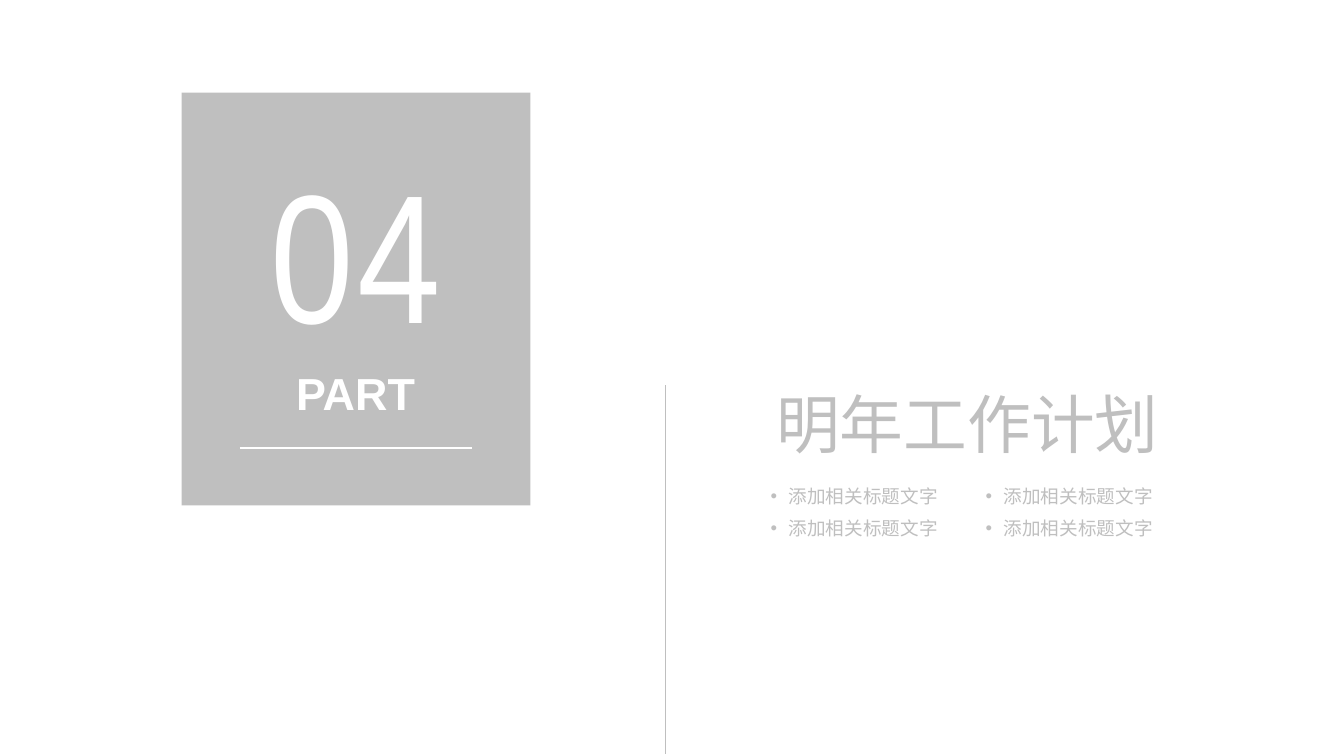
from itertools import product

from lxml.etree import SubElement
from pptx import Presentation
from pptx.dml.color import RGBColor
from pptx.enum.shapes import MSO_CONNECTOR, MSO_SHAPE
from pptx.enum.text import MSO_ANCHOR, MSO_AUTO_SIZE, PP_ALIGN
from pptx.oxml.ns import qn
from pptx.util import Inches, Pt

GREY = RGBColor(0xBF, 0xBF, 0xBF)
WHITE = RGBColor(0xFF, 0xFF, 0xFF)


class SectionPage:
    """One slide whose lengths are given in percent of its width and height."""

    font_name = "Arial"

    def __init__(self, deck):
        self.deck = deck
        self.page = deck.slides.add_slide(deck.slide_layouts.get_by_name("Title Only"))

    def place(self, left, top, width, height):
        across, down = self.deck.slide_width / 100, self.deck.slide_height / 100
        return [round(length) for length in
                (left * across, top * down, width * across, height * down)]

    def panel(self, area, color):
        panel = self.page.shapes.add_shape(MSO_SHAPE.RECTANGLE, *self.place(*area))
        panel.shadow.inherit = False
        panel.fill.solid()
        panel.fill.fore_color.rgb = color
        panel.line.fill.background()

    def rule(self, start, end, color, weight):
        rule = self.page.shapes.add_connector(
            MSO_CONNECTOR.STRAIGHT, *self.place(*start, *end))
        rule.line.color.rgb = color
        rule.line.width = Pt(weight)
        SubElement(rule._element.spPr, qn("a:effectLst"))

    def fill_text(self, box, text, size, color, align=PP_ALIGN.LEFT,
                  font_name=font_name, bold=False, margins=(0, 0)):
        """Fill a box with one styled paragraph and return that paragraph."""
        frame = box.text_frame
        frame.text = text
        frame.word_wrap = True
        frame.auto_size = MSO_AUTO_SIZE.SHAPE_TO_FIT_TEXT
        frame.vertical_anchor = MSO_ANCHOR.TOP
        frame.margin_left = frame.margin_right = Inches(margins[0])
        frame.margin_top = frame.margin_bottom = Inches(margins[1])
        para = frame.paragraphs[0]
        para.alignment = align
        font = para.runs[0].font
        font.name, font.size, font.bold = font_name, Pt(size), bold
        font.color.rgb = color
        return para

    def title(self, area, text, size, color):
        box = self.page.shapes.title
        box.left, box.top, box.width, box.height = self.place(*area)
        self.fill_text(box, text, size, color)

    def label(self, area, text, size, color, **style):
        box = self.page.shapes.add_textbox(*self.place(*area))
        return self.fill_text(box, text, size, color, **style)

    def bullet(self, area, text, size, color):
        para = self.label(area, text, size, color)
        para.level = 1
        properties = para._p.get_or_add_pPr()
        indent = Inches(0.19)
        properties.set("marL", str(indent))
        properties.set("indent", str(-indent))
        SubElement(properties, qn("a:buFont"), typeface=self.font_name)
        SubElement(properties, qn("a:buChar"), char="•")


def main():
    deck = Presentation()
    deck.slide_width, deck.slide_height = Inches(14.06), Inches(7.91)
    section = SectionPage(deck)

    section.panel((13.51, 12.26, 25.96, 54.61), GREY)
    section.rule((17.85, 59.29), (35.14, 59.29), WHITE, 1.5)
    section.label((16.93, 48.42, 19.06, 7.21), "PART", 33.8, WHITE,
                  align=PP_ALIGN.CENTER, bold=True)
    number = section.label((18.14, 17.95, 16.71, 30.59), "04", 137.9, WHITE,
                           align=PP_ALIGN.CENTER, font_name="Arial Narrow",
                           margins=(0.1, 0.05))
    number.runs[0].font._element.set("spc", "300")

    section.rule((49.5, 50.95), (49.5, 99.75), GREY, 0.5)
    section.title((57.75, 50.95, 33.57, 10.24), "明年工作计划", 48, GREY)
    for row, column in product(range(2), repeat=2):
        section.bullet((57.33 + 16 * column, 64.1 + 4.3 * row, 14.3, 3.03),
                       "添加相关标题文字", 14, GREY)

    deck.save("out.pptx")


if __name__ == "__main__":
    main()
